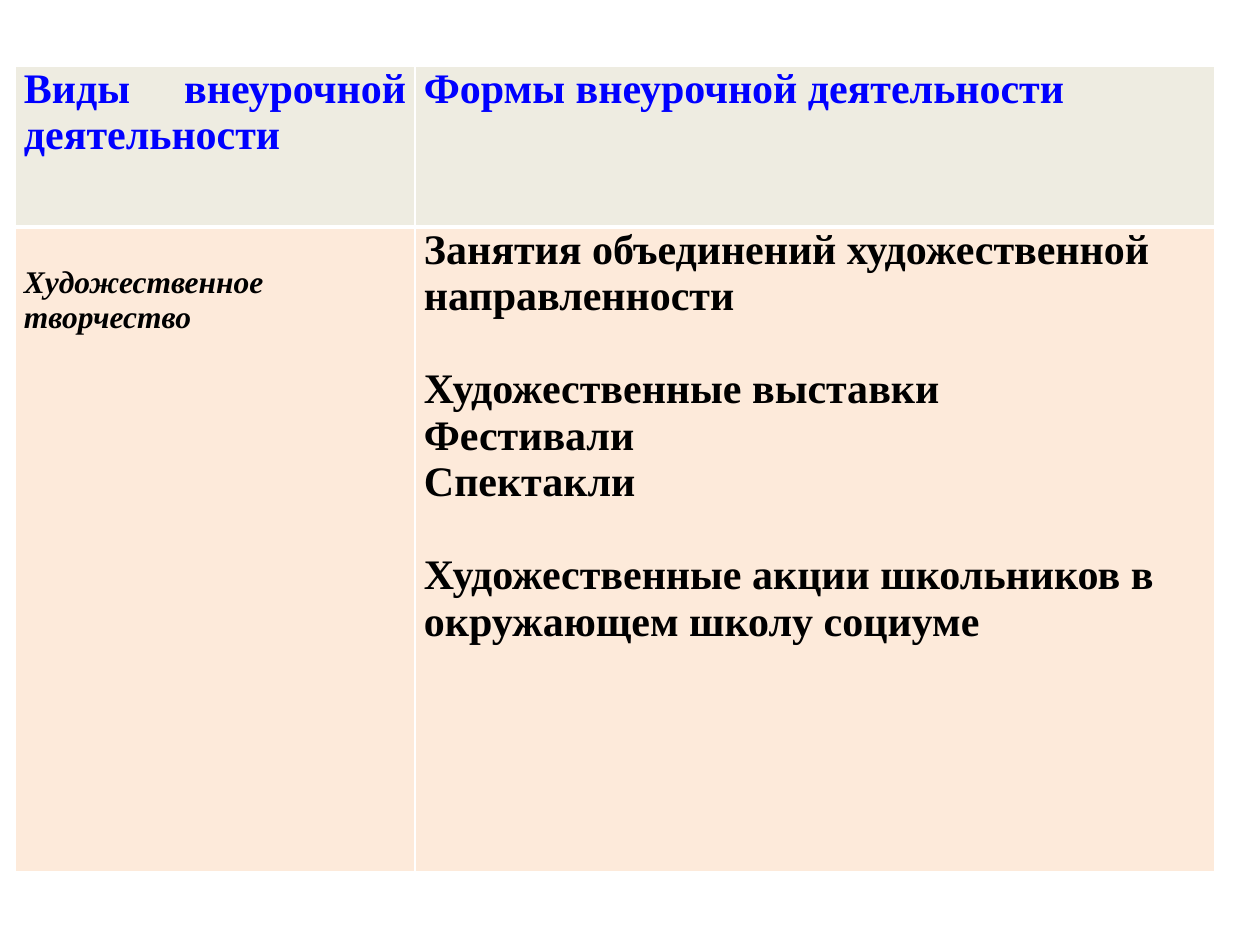
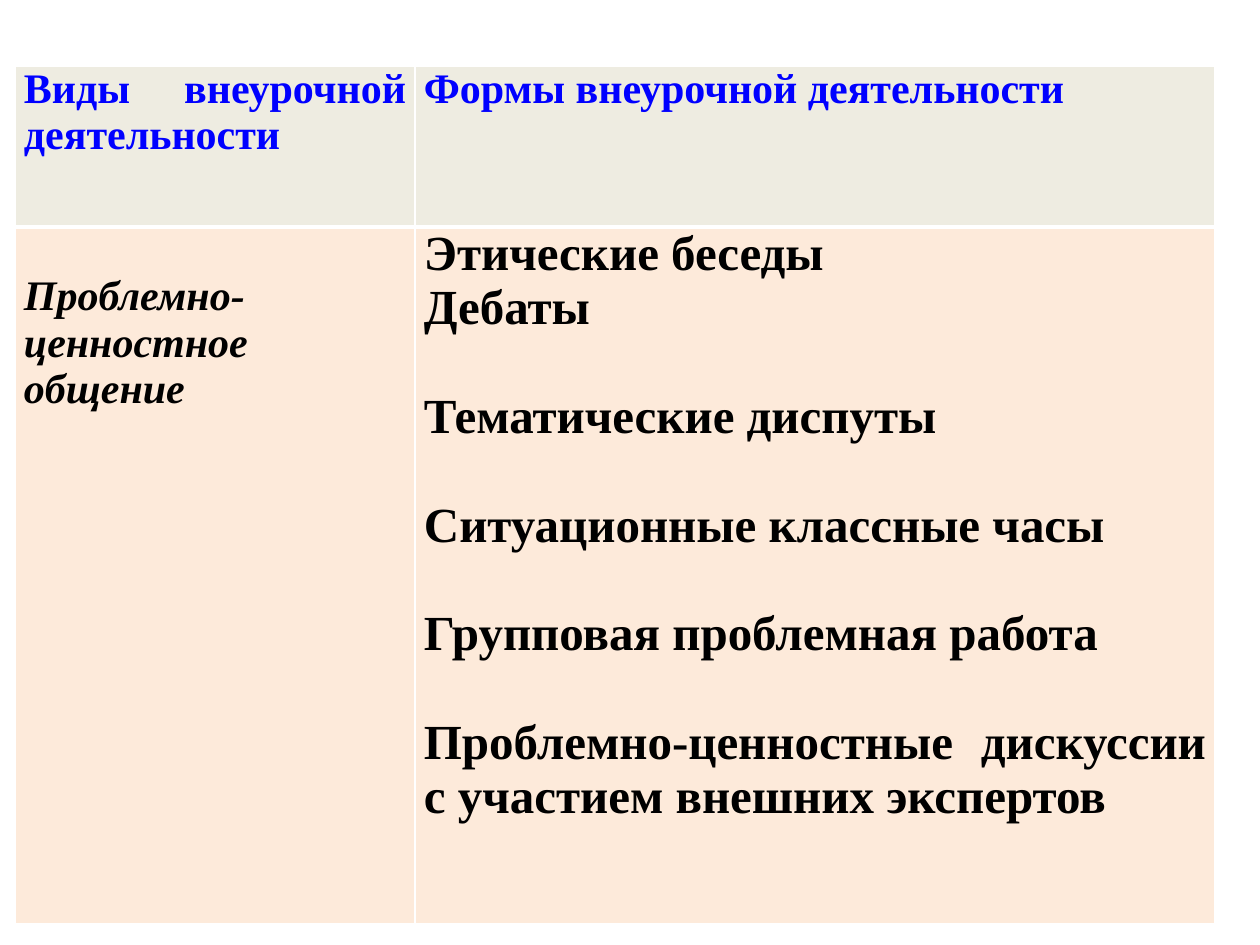
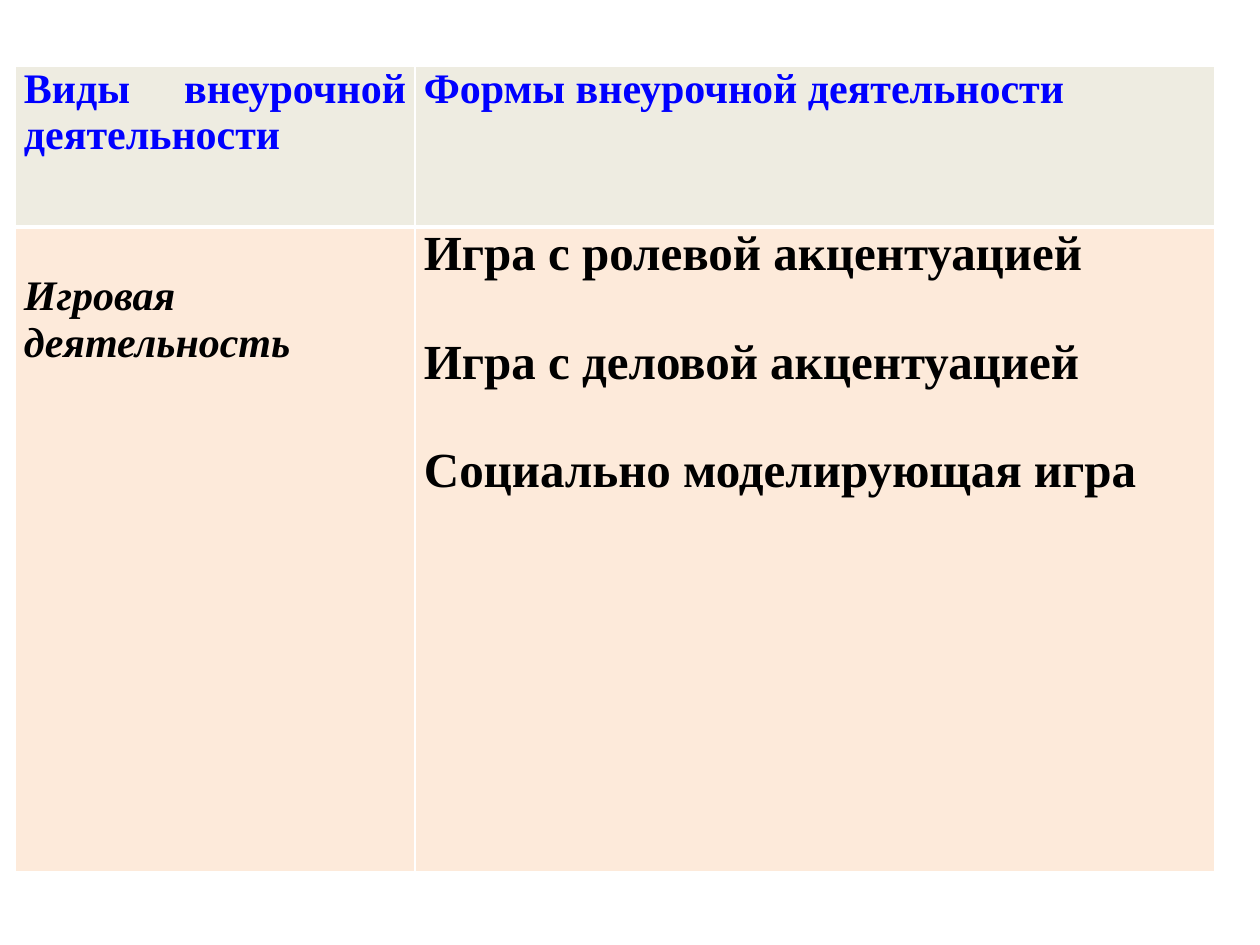
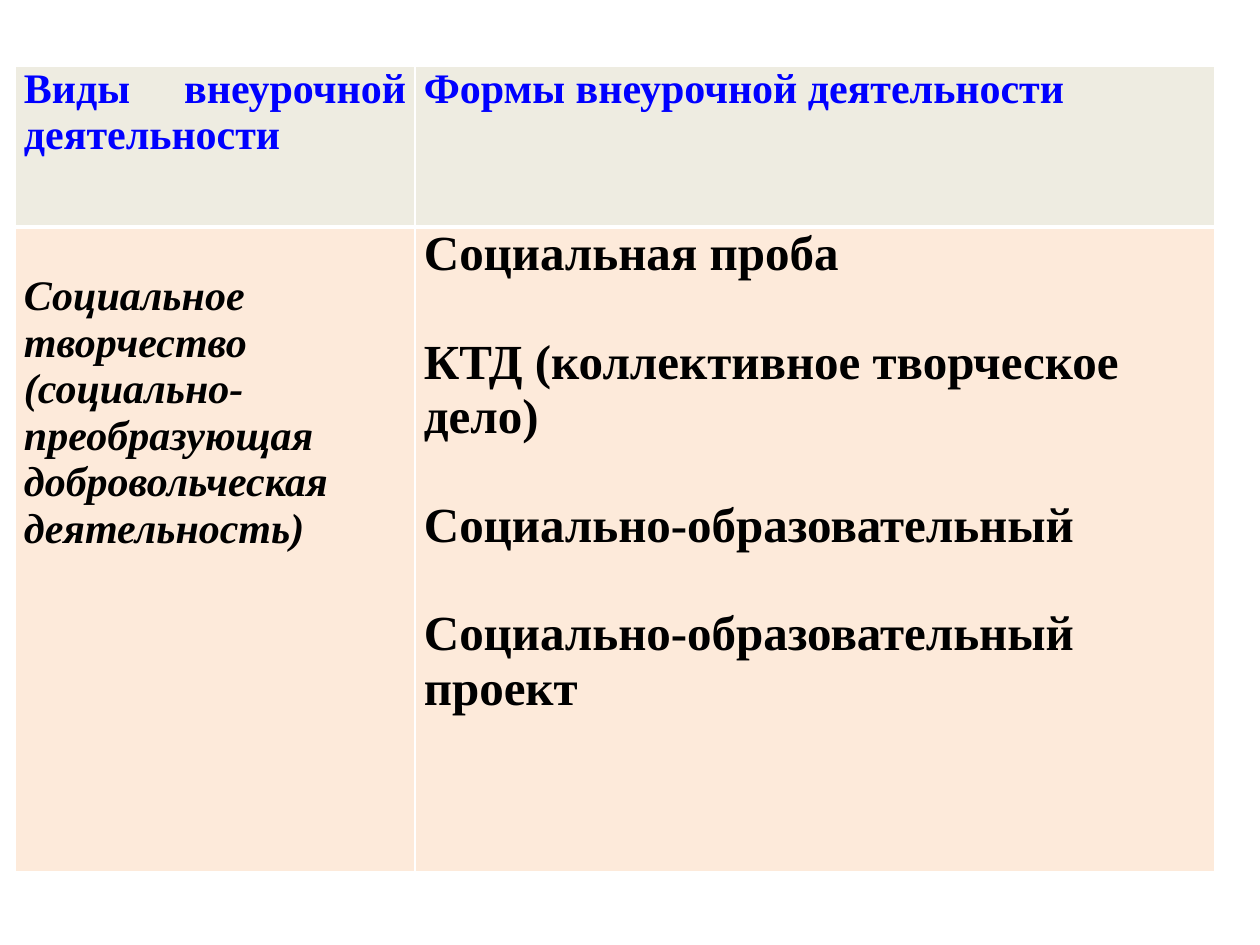
from dataclasses import dataclass

from lxml import etree
from pptx import Presentation
from pptx.dml.color import RGBColor
from pptx.enum.text import PP_ALIGN
from pptx.oxml.ns import qn
from pptx.util import Emu, Pt

LEFT, JUSTIFY = PP_ALIGN.LEFT, PP_ALIGN.JUSTIFY
PX_PER_INCH = 126
BLANK_LAYOUT = 6

HEADINGS = ["Виды внеурочной деятельности", "Формы внеурочной деятельности"]

# Forms come in groups (alignment, lines); one empty line separates groups.
ACTIVITIES = [
    {
        "kind": "Художественное творчество",
        "kind_size": 18, "kind_gap": 20, "form_size": 24, "body_height": 645,
        "forms": [
            (LEFT, ["Занятия объединений художественной направленности"]),
            (LEFT, ["Художественные выставки", "Фестивали", "Спектакли"]),
            (LEFT, ["Художественные акции школьников в окружающем школу социуме"]),
        ],
    },
    {
        "kind": "Проблемно-ценностное общение",
        "kind_size": 24, "kind_gap": 24, "form_size": 28, "body_height": 697,
        "forms": [
            (LEFT, ["Этические беседы", "Дебаты"]),
            (JUSTIFY, ["Тематические диспуты"]),
            (JUSTIFY, ["Ситуационные классные часы"]),
            (LEFT, ["Групповая проблемная работа"]),
            (JUSTIFY, ["Проблемно-ценностные дискуссии с участием внешних экспертов"]),
        ],
    },
    {
        "kind": "Игровая деятельность",
        "kind_size": 24, "kind_gap": 24, "form_size": 28, "body_height": 645,
        "forms": [
            (LEFT, ["Игра с ролевой акцентуацией"]),
            (LEFT, ["Игра с деловой акцентуацией"]),
            (LEFT, ["Социально моделирующая игра"]),
        ],
    },
    {
        "kind": "Социальное творчество (социально- преобразующая "
                "добровольческая деятельность)",
        "kind_size": 24, "kind_gap": 24, "form_size": 28, "body_height": 645,
        "forms": [
            (LEFT, ["Социальная проба"]),
            (LEFT, ["КТД (коллективное творческое дело)"]),
            (LEFT, ["Социально-образовательный"]),
            (LEFT, ["Социально-образовательный проект"]),
        ],
    },
]


@dataclass(frozen=True)
class Theme:
    font: str = "Times New Roman"
    heading_size: int = 24
    heading_color: str = "0000FF"
    body_color: str = "000000"
    heading_fill: str = "EEECE1"
    body_fill: str = "FDEADA"
    border: str = "FFFFFF"
    thin: int = 1
    thick: int = 3
    line_spacing: float = 1.11


THEME = Theme()
TABLE_LEFT, TABLE_TOP = 15, 66
COLUMN_WIDTHS = [400, 800]
HEADING_HEIGHT = 161
SIDE_MARGIN = 9


def px(length):
    return Emu(round(length * 914400 / PX_PER_INCH))


def line_height(size):
    return Pt(round(size * THEME.line_spacing, 1))


def set_borders(cell, top, bottom):
    properties = cell._tc.get_or_add_tcPr()
    widths = {"a:lnL": THEME.thin, "a:lnR": THEME.thin, "a:lnT": top, "a:lnB": bottom}
    for side, width in widths.items():
        line = etree.SubElement(properties, qn(side), w=str(Pt(width)))
        fill = etree.SubElement(line, qn("a:solidFill"))
        etree.SubElement(fill, qn("a:srgbClr"), val=THEME.border)


def style_cell(cell, fill, top, bottom):
    set_borders(cell, top, bottom)
    cell.fill.solid()
    cell.fill.fore_color.rgb = RGBColor.from_string(fill)
    cell.margin_left = cell.margin_right = px(SIDE_MARGIN)
    cell.margin_top = cell.margin_bottom = 0


def write(cell, groups, size, color, italic=False):
    frame = cell.text_frame
    lines = [(text, align, group > 0 and place == 0)
             for group, (align, texts) in enumerate(groups)
             for place, text in enumerate(texts)]
    for index, (text, align, after_gap) in enumerate(lines):
        paragraph = frame.add_paragraph() if index else frame.paragraphs[0]
        paragraph.text = text
        paragraph.alignment = align
        if after_gap:
            paragraph.space_before = line_height(size)
        font = paragraph.font
        font.name, font.size = THEME.font, Pt(size)
        font.bold, font.italic = True, italic
        font.color.rgb = RGBColor.from_string(color)


def add_activity_slide(deck, activity):
    slide = deck.slides.add_slide(deck.slide_layouts[BLANK_LAYOUT])
    heights = [HEADING_HEIGHT, activity["body_height"]]
    table = slide.shapes.add_table(
        len(heights), len(COLUMN_WIDTHS), px(TABLE_LEFT), px(TABLE_TOP),
        px(sum(COLUMN_WIDTHS)), px(sum(heights))).table
    table.horz_banding = False
    for column, width in zip(table.columns, COLUMN_WIDTHS):
        column.width = px(width)
    for row, height in zip(table.rows, heights):
        row.height = px(height)

    for column, heading in enumerate(HEADINGS):
        heading_cell, body_cell = table.cell(0, column), table.cell(1, column)
        style_cell(heading_cell, THEME.heading_fill, THEME.thin, THEME.thick)
        style_cell(body_cell, THEME.body_fill, THEME.thick, THEME.thin)
        write(heading_cell, [(JUSTIFY, [heading])], THEME.heading_size, THEME.heading_color)

    kind_cell, forms_cell = table.cell(1, 0), table.cell(1, 1)
    kind_cell.margin_top = line_height(activity["kind_gap"])
    write(kind_cell, [(JUSTIFY, [activity["kind"]])], activity["kind_size"],
          THEME.body_color, italic=True)
    write(forms_cell, activity["forms"], activity["form_size"], THEME.body_color)


def main():
    deck = Presentation()
    deck.slide_width, deck.slide_height = px(1260), px(945)
    for activity in ACTIVITIES:
        add_activity_slide(deck, activity)
    deck.save("out.pptx")


if __name__ == "__main__":
    main()
